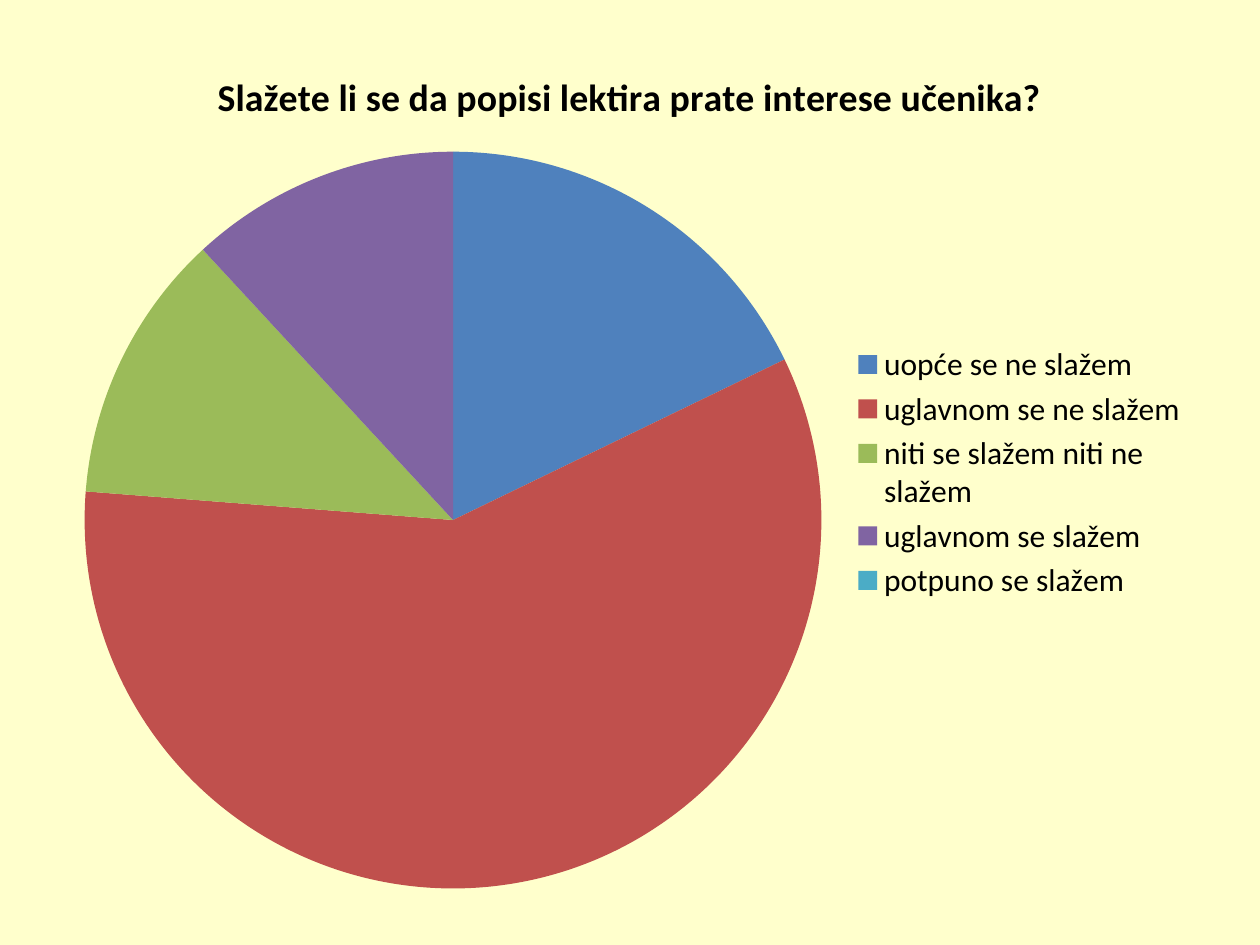
from dataclasses import dataclass

from lxml import etree
from pptx import Presentation
from pptx.chart.data import CategoryChartData
from pptx.dml.color import RGBColor
from pptx.enum.chart import XL_CHART_TYPE, XL_LEGEND_POSITION
from pptx.oxml.ns import qn
from pptx.util import Pt

PIE = XL_CHART_TYPE.PIE
LEGEND_RIGHT = XL_LEGEND_POSITION.RIGHT

QUESTION = "Slažete li se da popisi lektira prate interese učenika?"
ANSWERS = {
    "uopće se ne slažem": 18,
    "uglavnom se ne slažem": 59,
    "niti se slažem niti ne slažem": 12,
    "uglavnom se slažem": 12,
    "potpuno se slažem": 0,
}


@dataclass(frozen=True)
class Theme:
    font: str = "Calibri"
    background: str = "FFFFCC"
    text: str = "000000"
    slices: tuple = ("4F81BD", "C0504D", "9BBB59", "8064A2", "4BACC6")
    title_size: float = 21.6
    body_size: float = 18


class SlideBuilder:
    def __init__(self, slide, theme):
        self.s = slide
        self.theme = theme

    def background(self):
        fill = self.s.background.fill
        fill.solid()
        fill.fore_color.rgb = RGBColor.from_string(self.theme.background)

    def style_font(self, font, size, bold=False):
        font.name = self.theme.font
        font.size = Pt(size)
        font.bold = bold
        font.color.rgb = RGBColor.from_string(self.theme.text)

    def pie(self, title, answers, box, plot):
        data = CategoryChartData()
        data.categories = list(answers)
        data.add_series(title, list(answers.values()))
        frame = self.s.shapes.add_chart(PIE, *map(Pt, box), data)
        chart = frame.chart
        self.style_font(chart.font, self.theme.body_size)

        # Title
        chart.has_title = True
        tf = chart.chart_title.text_frame
        tf.text = title
        self.style_font(tf.paragraphs[0].font, self.theme.title_size, bold=True)
        chart.chart_title.include_in_layout = False

        # Legend
        chart.has_legend = True
        chart.legend.position = LEGEND_RIGHT
        chart.legend.include_in_layout = False

        # Slices
        chart.plots[0].vary_by_categories = True
        points = chart.plots[0].series[0].points
        for i, color in enumerate(self.theme.slices):
            fill = points[i].format.fill
            fill.solid()
            fill.fore_color.rgb = RGBColor.from_string(color)

        self.place_plot(chart, plot)

    def place_plot(self, chart, plot):
        """Place the plot area by fractions of the chart: x, y, w, h."""
        area = chart.element.find(".//" + qn("c:plotArea"))
        for old in area.findall(qn("c:layout")):
            area.remove(old)
        layout = etree.Element(qn("c:layout"))
        manual = etree.SubElement(layout, qn("c:manualLayout"))
        settings = [("layoutTarget", "inner"), ("xMode", "edge"), ("yMode", "edge")]
        for tag, value in settings + list(zip("xywh", plot)):
            etree.SubElement(manual, qn(f"c:{tag}")).set("val", str(value))
        area.insert(0, layout)


def main():
    prs = Presentation()
    prs.slide_width, prs.slide_height = Pt(720), Pt(540)
    slide = prs.slides.add_slide(prs.slide_layouts[6])
    builder = SlideBuilder(slide, Theme())

    # Background and survey chart
    builder.background()
    builder.pie(QUESTION, ANSWERS, box=(33.84, 22.32, 652.32, 495.36),
                plot=(0.02, 0.13, 0.65, 0.85))
    prs.save("out.pptx")


if __name__ == "__main__":
    main()
